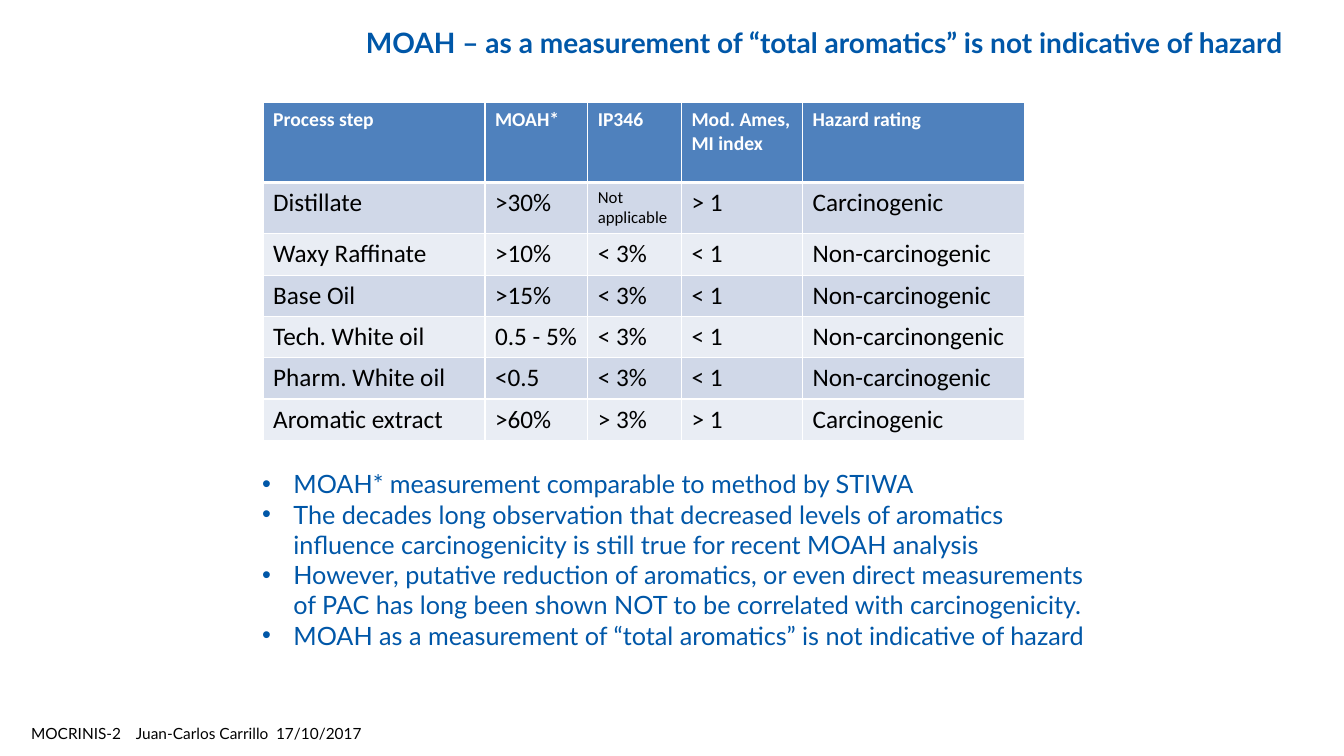
"""Build a slide relating MOAH levels of process steps to hazard ratings."""
from lxml import etree
from pptx import Presentation
from pptx.dml.color import RGBColor
from pptx.enum.text import MSO_ANCHOR, MSO_AUTO_SIZE, PP_ALIGN
from pptx.oxml.ns import qn
from pptx.util import Inches, Pt

TITLE = "MOAH – as a measurement of “total aromatics” is not indicative of hazard"
BULLETS = [
    "MOAH* measurement comparable to method by STIWA",
    "The decades long observation that decreased levels of aromatics "
    "influence carcinogenicity is still true for recent MOAH analysis",
    "However, putative reduction of aromatics, or even direct measurements "
    "of PAC has long been shown NOT to be correlated with carcinogenicity.",
    "MOAH as a measurement of “total aromatics” is not indicative of hazard",
]
ROWS = [
    ("Process step", "MOAH*", "IP346", "Mod. Ames,\nMI index", "Hazard rating"),
    ("Distillate", ">30%", "Not applicable", "> 1", "Carcinogenic"),
    ("Waxy Raffinate", ">10%", "< 3%", "< 1", "Non-carcinogenic"),
    ("Base Oil", ">15%", "< 3%", "< 1", "Non-carcinogenic"),
    ("Tech. White oil", "0.5 - 5%", "< 3%", "< 1", "Non-carcinongenic"),
    ("Pharm. White oil", "<0.5", "< 3%", "< 1", "Non-carcinogenic"),
    ("Aromatic extract", ">60%", "> 3%", "> 1", "Carcinogenic"),
]
FOOTER = "MOCRINIS-2\tJuan-Carlos Carrillo\t17/10/2017"

SLIDE_SIZE = (13.33, 7.5)
TITLE_BOX = (3.14, 0.17, 10.07, 0.5)
BULLET_BOX = (2.5, 4.6, 8.49, 2.22)
FOOTER_BOX = (0.21, 7.13, 8.14, 0.13)
FOOTER_TABS = (1.04, 2.43)
TABLE_CORNER = (2.61, 1.02)
COLUMN_WIDTHS = (2.2, 1.02, 0.93, 1.2, 2.2)
ROW_HEIGHTS = (0.79, 0.51) + (0.41,) * 5
BULLET_INDENT = 0.31

BLUE = RGBColor(0x00, 0x57, 0xA8)
BLACK = RGBColor(0x00, 0x00, 0x00)
WHITE = RGBColor(0xFF, 0xFF, 0xFF)
HEADER_FILL = RGBColor(0x4F, 0x81, 0xBD)
BAND_FILLS = (RGBColor(0xE9, 0xED, 0xF4), RGBColor(0xD0, 0xD8, 0xE8))
MIDDLE, TOP = MSO_ANCHOR.MIDDLE, MSO_ANCHOR.TOP
NO_FIT = MSO_AUTO_SIZE.NONE
CENTER, LEFT = PP_ALIGN.CENTER, PP_ALIGN.LEFT


def place(shape, box):
    shape.left, shape.top, shape.width, shape.height = map(Inches, box)


def add_run(paragraph, text, size, color, font="Lato", bold=False):
    run = paragraph.add_run()
    run.text = text
    run.font.name, run.font.size, run.font.bold = font, Pt(size), bold
    run.font.color.rgb = color


def write_lines(frame, lines, *style):
    for index, line in enumerate(lines):
        paragraph = frame.add_paragraph() if index else frame.paragraphs[0]
        paragraph.alignment = LEFT
        paragraph.space_before = Pt(0)
        add_run(paragraph, line, *style)


def add_border(cell, side, points):
    line = etree.SubElement(cell._tc.get_or_add_tcPr(), qn(f"a:ln{side}"), w=str(Pt(points)))
    fill = etree.SubElement(line, qn("a:solidFill"))
    etree.SubElement(fill, qn("a:srgbClr"), val=str(WHITE))


def add_title(slide):
    title = slide.shapes.title
    place(title, TITLE_BOX)
    frame = title.text_frame
    frame.auto_size, frame.vertical_anchor, frame.word_wrap = NO_FIT, MIDDLE, True
    frame.paragraphs[0].alignment = CENTER
    add_run(frame.paragraphs[0], TITLE, 20, BLUE, bold=True)


def add_bullets(slide):
    body = slide.placeholders[1]
    place(body, BULLET_BOX)
    frame = body.text_frame
    frame.auto_size, frame.vertical_anchor, frame.word_wrap = NO_FIT, TOP, True
    write_lines(frame, BULLETS, 18, BLUE)
    for paragraph in frame.paragraphs:
        properties = paragraph._p.get_or_add_pPr()
        properties.set("marL", str(Inches(BULLET_INDENT)))
        properties.set("indent", str(-Inches(BULLET_INDENT)))
        etree.SubElement(properties, qn("a:buFont"), typeface="Arial")
        etree.SubElement(properties, qn("a:buChar"), char="•")


def add_hazard_table(slide):
    size = (sum(COLUMN_WIDTHS), sum(ROW_HEIGHTS))
    table = slide.shapes.add_table(
        len(ROWS), len(COLUMN_WIDTHS), *map(Inches, TABLE_CORNER + size)).table
    for column, width in zip(table.columns, COLUMN_WIDTHS):
        column.width = Inches(width)
    for row, height in zip(table.rows, ROW_HEIGHTS):
        row.height = Inches(height)
    for row_index, values in enumerate(ROWS):
        header = row_index == 0
        for column_index, value in enumerate(values):
            cell = table.cell(row_index, column_index)
            size = 14 if header else 12 if value == "Not applicable" else 18
            color = WHITE if header else BLACK
            write_lines(cell.text_frame, value.split("\n"), size, color, "Calibri", header)
            for side in "LRTB":
                thick = (row_index, side) in ((0, "B"), (1, "T"))
                add_border(cell, side, 3 if thick else 1)
            cell.fill.solid()
            cell.fill.fore_color.rgb = HEADER_FILL if header else BAND_FILLS[row_index % 2]


def add_footer(slide):
    frame = slide.shapes.add_textbox(*map(Inches, FOOTER_BOX)).text_frame
    frame.word_wrap = True
    paragraph = frame.paragraphs[0]
    tabs = etree.SubElement(paragraph._p.get_or_add_pPr(), qn("a:tabLst"))
    for position in FOOTER_TABS:
        etree.SubElement(tabs, qn("a:tab"), pos=str(Inches(position)), algn="l")
    add_run(paragraph, FOOTER, 11, BLACK)


def main():
    presentation = Presentation()
    presentation.slide_width, presentation.slide_height = map(Inches, SLIDE_SIZE)
    slide = presentation.slides.add_slide(presentation.slide_layouts[1])
    add_title(slide)
    add_bullets(slide)
    add_hazard_table(slide)
    add_footer(slide)
    presentation.save("out.pptx")


if __name__ == "__main__":
    main()
